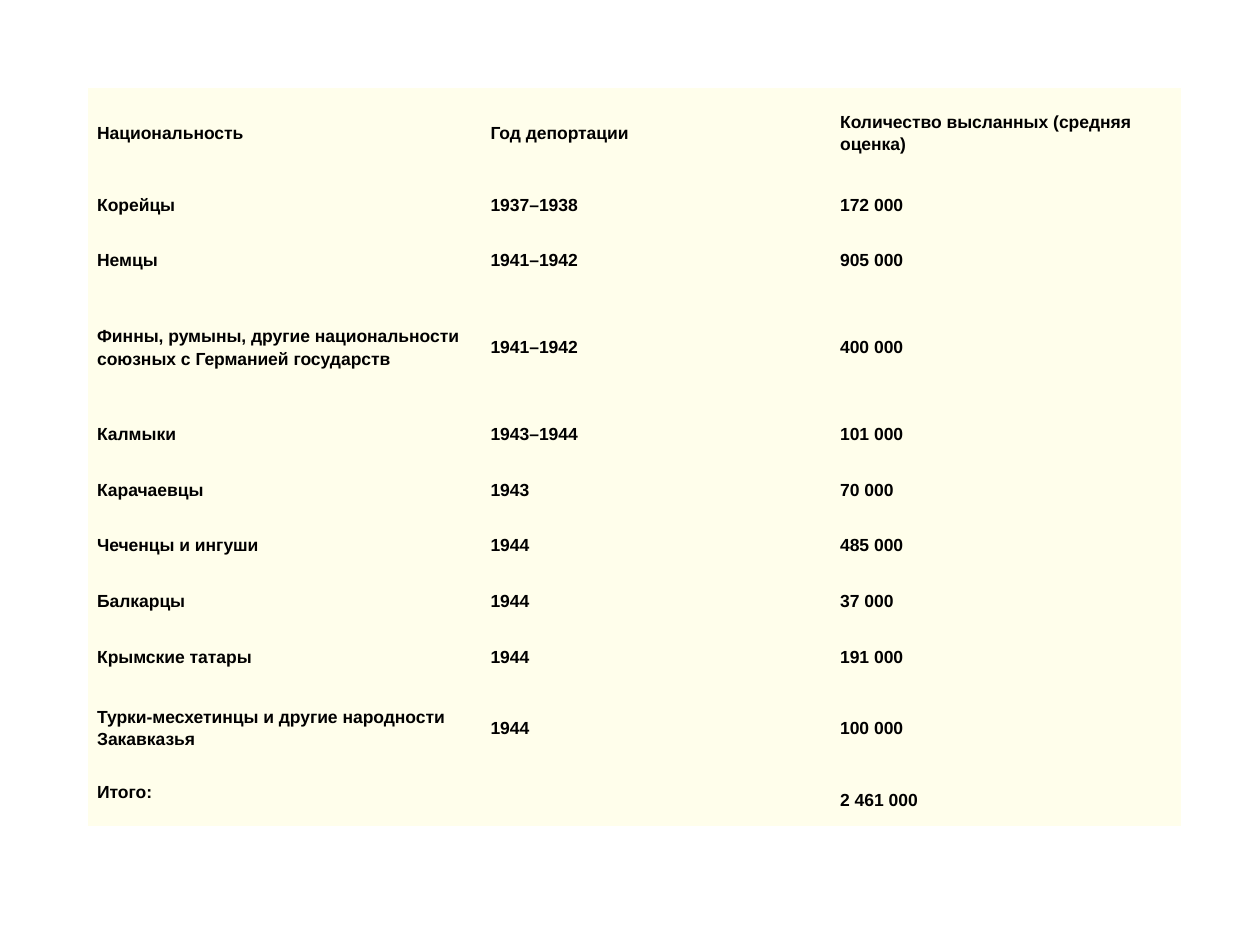
"""Build a slide with a table of deported nationalities, years and numbers."""
from dataclasses import dataclass

from pptx import Presentation
from pptx import util as u
from pptx.dml import color
from pptx.enum import text

COLORS = {"cell": "FFFEEB", "text": "000000"}
FONT = "Arial"
NO_STYLE_NO_GRID = "{2D5ABB26-0587-4C30-8999-92F81FD0307C}"
LEFT, TOP, INSET = 50.5, 50.5, 5
COL_WIDTHS = (224.8, 199.8, 199.8)
SINGLE, DOUBLE, TRIPLE = 31.75, 50, 67.8


@dataclass(frozen=True)
class Row:
    nationality: str
    year: str
    exiled: str
    height: float = SINGLE


ROWS = (
    Row("Национальность", "Год депортации", "Количество высланных (средняя оценка)", DOUBLE),
    Row("Корейцы", "1937–1938", "172 000"),
    Row("Немцы", "1941–1942", "905 000"),
    Row("Финны, румыны, другие национальности союзных с Германией государств",
        "1941–1942", "400 000", TRIPLE),
    Row("Калмыки", "1943–1944", "101 000"),
    Row("Карачаевцы", "1943", "70 000"),
    Row("Чеченцы и ингуши", "1944", "485 000"),
    Row("Балкарцы", "1944", "37 000"),
    Row("Крымские татары", "1944", "191 000"),
    Row("Турки-месхетинцы и другие народности Закавказья", "1944", "100 000", DOUBLE),
    Row("Итого:", "", "2 461 000"),
)


def rgb(name: str) -> color.RGBColor:
    return color.RGBColor.from_string(COLORS[name])


def fill_cell(cell, content: str) -> None:
    cell.fill.solid()
    cell.fill.fore_color.rgb = rgb("cell")
    cell.margin_left = cell.margin_right = u.Pt(INSET)
    cell.margin_top = cell.margin_bottom = u.Pt(INSET)
    cell.vertical_anchor = text.MSO_ANCHOR.MIDDLE
    p = cell.text_frame.paragraphs[0]
    p.text = content
    p.line_spacing = 1.15
    p.font.name, p.font.size, p.font.bold = FONT, u.Pt(10), True
    p.font.color.rgb = rgb("text")


def add_deportation_table(s) -> None:
    frame = s.shapes.add_table(
        len(ROWS), len(COL_WIDTHS), u.Pt(LEFT), u.Pt(TOP),
        u.Pt(sum(COL_WIDTHS)), u.Pt(sum(row.height for row in ROWS)))
    table = frame.table
    table.first_row = table.horz_banding = False
    table._tbl.tblPr[0].text = NO_STYLE_NO_GRID
    for column, width in zip(table.columns, COL_WIDTHS):
        column.width = u.Pt(width)
    for i, row in enumerate(ROWS):
        table.rows[i].height = u.Pt(row.height)
        for j, content in enumerate((row.nationality, row.year, row.exiled)):
            fill_cell(table.cell(i, j), content)
    total = table.cell(len(ROWS) - 1, 0)
    total.merge(table.cell(len(ROWS) - 1, 1))
    total.vertical_anchor = text.MSO_ANCHOR.TOP


def main() -> None:
    prs = Presentation()
    prs.slide_width, prs.slide_height = u.Pt(720), u.Pt(540)
    s = prs.slides.add_slide(prs.slide_layouts[6])
    add_deportation_table(s)
    prs.save("out.pptx")


if __name__ == "__main__":
    main()
